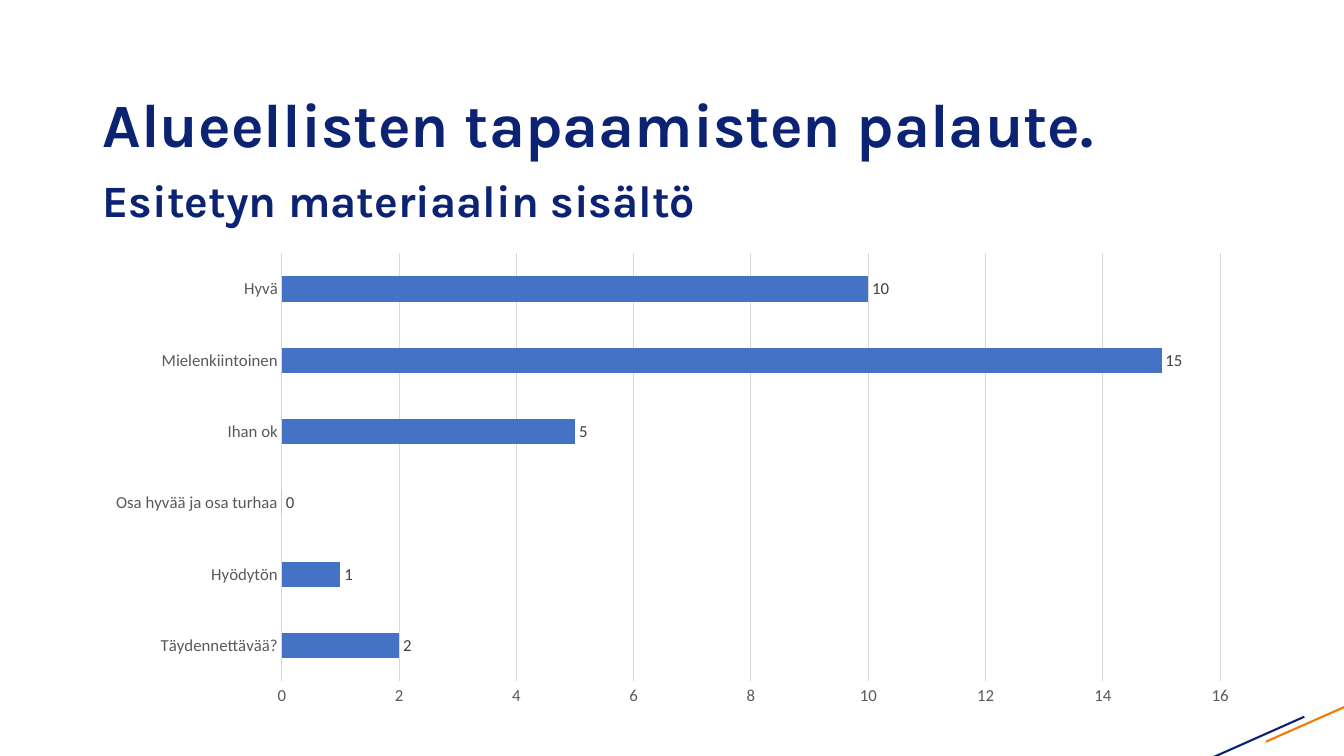
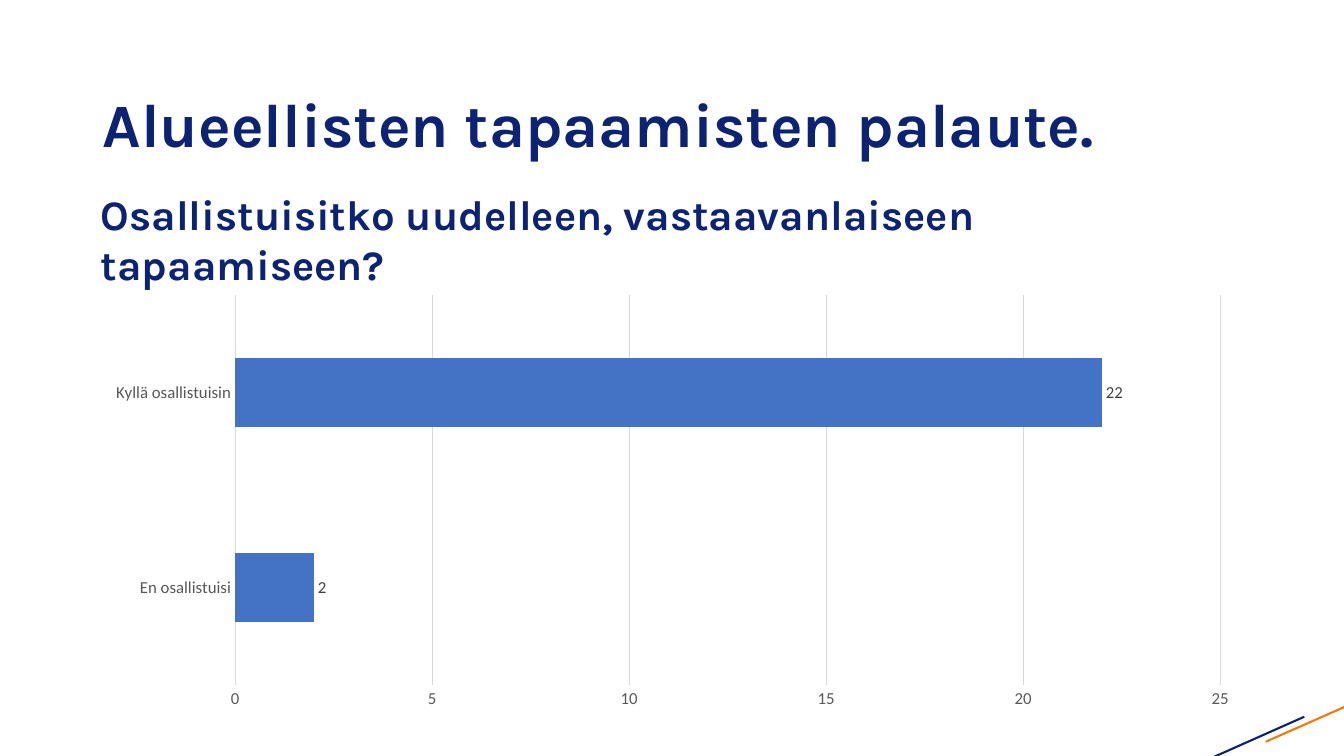
from lxml import etree
from pptx import Presentation
from pptx import util as u
from pptx.chart import data as chart_data
from pptx.dml.color import RGBColor
from pptx.enum import chart as ch
from pptx.enum import shapes, text
from pptx.oxml import ns

NAVY = RGBColor(0x0C, 0x22, 0x72)
ORANGE = RGBColor(0xF4, 0x79, 0x09)
BAR_BLUE = RGBColor(0x44, 0x72, 0xC4)
GRID_GREY = RGBColor(0xD9, 0xD9, 0xD9)
AXIS_GREY = RGBColor(0x59, 0x59, 0x59)
LABEL_GREY = RGBColor(0x40, 0x40, 0x40)
BLACK = RGBColor(0, 0, 0)

HEADING_FONT = "Karla"
CHART_FONT = "Calibri"
LEFT, WIDTH = 2.34, 29.21
TITLE = "Alueellisten tapaamisten palaute."
CORNER_STROKES = [
    (ORANGE, (31.9, 18.69, 33.96, 17.78)),
    (NAVY, (30.53, 19.1, 32.87, 18.06)),
]

QUESTIONS = [
    dict(
        subtitle="Esitetyn materiaalin sisältö",
        subtitle_box=(LEFT, 4.39, WIDTH, 1.7),
        subtitle_format=dict(size=32, line_spacing=0.9),
        chart_box=(LEFT, 6.15, WIDTH, 11.86),
        answers={
            "Täydennettävää?": 2,
            "Hyödytön": 1,
            "Osa hyvää ja osa turhaa": 0,
            "Ihan ok": 5,
            "Mielenkiintoinen": 15,
            "Hyvä": 10,
        },
        axis_max=16,
        axis_step=2,
    ),
    dict(
        subtitle="Osallistuisitko uudelleen, vastaavanlaiseen tapaamiseen?",
        subtitle_box=(2.29, 4.62, 29.24, 1.55),
        subtitle_format=dict(size=30),
        chart_box=(LEFT, 7.21, WIDTH, 10.87),
        answers={"En osallistuisi": 2, "Kyllä osallistuisin": 22},
        axis_max=25,
        axis_step=5,
    ),
]


def cm(box):
    return [u.Cm(length) for length in box]


def style_font(font, size, color, name=CHART_FONT, bold=False):
    font.size = u.Pt(size)
    font.name = name
    font.bold = bold
    font.color.rgb = color


def add_heading(slide, box, words, size=44, line_spacing=1.0):
    frame = slide.shapes.add_textbox(*cm(box)).text_frame
    frame.word_wrap = True
    frame.vertical_anchor = text.MSO_ANCHOR.TOP
    paragraph = frame.paragraphs[0]
    paragraph.text = words
    paragraph.line_spacing = line_spacing
    style_font(paragraph.font, size, NAVY, HEADING_FONT, bold=True)


def add_corner_strokes(slide):
    for color, ends in CORNER_STROKES:
        stroke = slide.shapes.add_connector(shapes.MSO_CONNECTOR.STRAIGHT, *cm(ends))
        stroke.line.color.rgb = color
        stroke.line.width = u.Pt(1.5)
        etree.SubElement(stroke._element.spPr, ns.qn("a:effectLst"))


def style_line(line):
    line.color.rgb = GRID_GREY
    line.width = u.Pt(0.75)


def add_answer_chart(slide, box, answers, axis_max, axis_step):
    responses = chart_data.CategoryChartData()
    responses.categories = list(answers)
    responses.add_series("Series 1", list(answers.values()))
    chart = slide.shapes.add_chart(
        ch.XL_CHART_TYPE.BAR_CLUSTERED, *cm(box), responses
    ).chart
    chart.has_title = False
    chart.has_legend = False
    style_font(chart.font, 10, BLACK)

    for axis in (chart.category_axis, chart.value_axis):
        axis.major_tick_mark = ch.XL_TICK_MARK.NONE
        axis.minor_tick_mark = ch.XL_TICK_MARK.NONE
        style_font(axis.tick_labels.font, 12, AXIS_GREY)
    style_line(chart.category_axis.format.line)

    scale = chart.value_axis
    scale.minimum_scale, scale.maximum_scale = 0, axis_max
    scale.major_unit = axis_step
    scale.format.line.fill.background()
    scale.has_major_gridlines = True
    style_line(scale.major_gridlines.format.line)

    bars = chart.plots[0]
    bars.gap_width = 182
    bars.vary_by_categories = False
    fill = bars.series[0].format.fill
    fill.solid()
    fill.fore_color.rgb = BAR_BLUE
    bars.has_data_labels = True
    bars.data_labels.show_value = True
    bars.data_labels.position = ch.XL_LABEL_POSITION.OUTSIDE_END
    style_font(bars.data_labels.font, 12, LABEL_GREY)


def add_question_slide(deck, question):
    slide = deck.slides.add_slide(deck.slide_layouts[6])
    add_corner_strokes(slide)
    add_heading(slide, (LEFT, 2.24, WIDTH, 2.11), TITLE, line_spacing=0.9)
    add_answer_chart(
        slide,
        question["chart_box"],
        question["answers"],
        question["axis_max"],
        question["axis_step"],
    )
    add_heading(
        slide,
        question["subtitle_box"],
        question["subtitle"],
        **question["subtitle_format"],
    )


def main():
    deck = Presentation()
    deck.slide_width, deck.slide_height = cm((33.87, 19.05))
    for question in QUESTIONS:
        add_question_slide(deck, question)
    deck.save("out.pptx")


if __name__ == "__main__":
    main()
